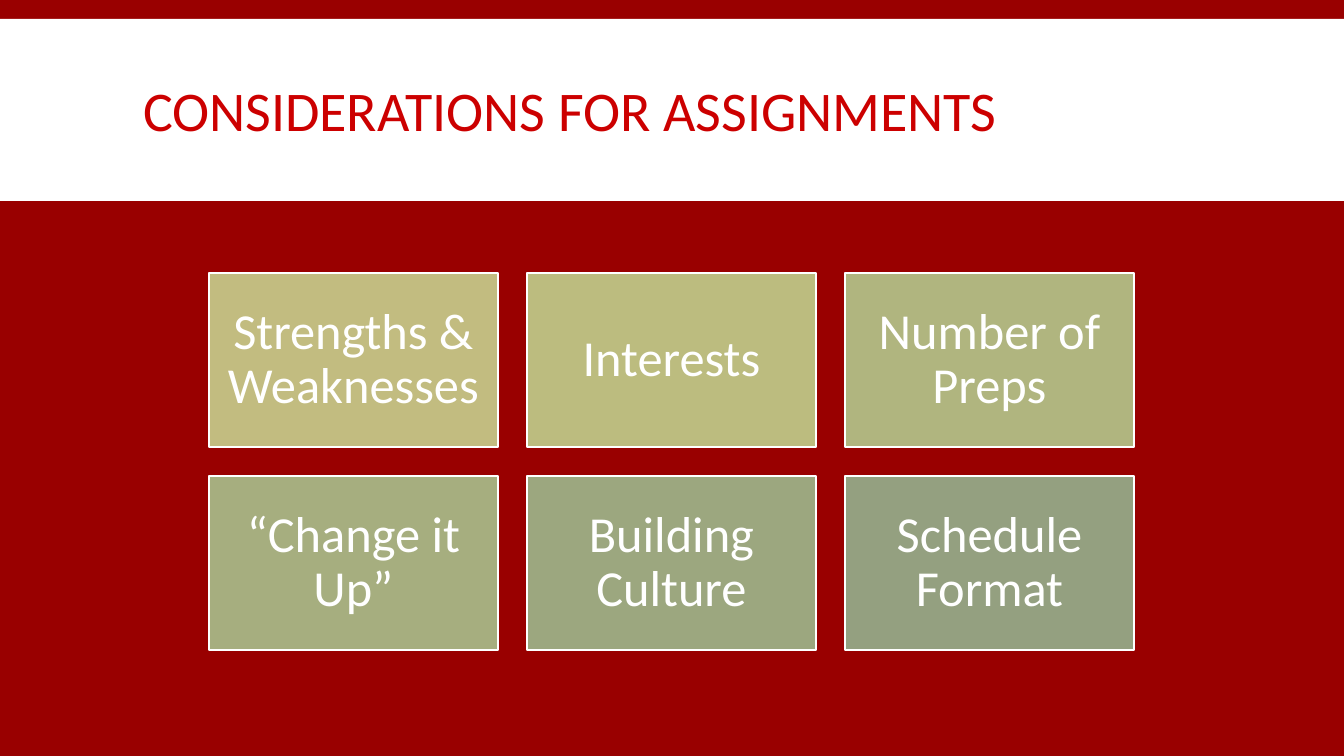
from dataclasses import dataclass

from pptx import Presentation
from pptx.dml.color import RGBColor
from pptx.enum.shapes import MSO_SHAPE
from pptx.enum.text import MSO_ANCHOR, MSO_AUTO_SIZE, PP_ALIGN
from pptx.util import Emu, Pt

RECTANGLE = MSO_SHAPE.RECTANGLE
MIDDLE = MSO_ANCHOR.MIDDLE
NO_AUTOFIT = MSO_AUTO_SIZE.NONE
LEFT, CENTER = PP_ALIGN.LEFT, PP_ALIGN.CENTER
TITLE_ONLY = 5
EMU_PER_PX = 914400 / 100.8


def px(length):
    return Emu(round(length * EMU_PER_PX))


@dataclass(frozen=True)
class Theme:
    font: str = "Calibri"
    background: str = "990000"
    white: str = "FFFFFF"
    heading: str = "CC0000"
    tiles: tuple = ("C2BC80", "BCBC7F", "B0B57F", "A6AE7F", "9CA77F", "94A080")
    heading_size: int = 40
    tile_size: int = 36
    outline: int = 1


class SlideBuilder:
    def __init__(self, slide, theme):
        self.slide = slide
        self.theme = theme
        backdrop = slide.background.fill
        backdrop.solid()
        backdrop.fore_color.rgb = RGBColor.from_string(theme.background)

    def add_text(self, frame, text, size, color, align, spacing):
        frame.word_wrap = True
        frame.auto_size = NO_AUTOFIT
        frame.vertical_anchor = MIDDLE
        paragraph = frame.paragraphs[0]
        paragraph.alignment = align
        paragraph.line_spacing = spacing
        run = paragraph.add_run()
        run.text = text
        run.font.name = self.theme.font
        run.font.size = Pt(size)
        run.font.color.rgb = RGBColor.from_string(color)

    def rectangle(self, left, top, width, height, color):
        panel = self.slide.shapes.add_shape(
            RECTANGLE, px(left), px(top), px(width), px(height)
        )
        panel.shadow.inherit = False
        panel.fill.solid()
        panel.fill.fore_color.rgb = RGBColor.from_string(color)
        panel.line.fill.background()
        return panel

    def title(self, text, left, top, width, height):
        heading = self.slide.shapes.title
        heading.left, heading.top = px(left), px(top)
        heading.width, heading.height = px(width), px(height)
        heading.element.getparent().append(heading.element)
        self.add_text(heading.text_frame, text, self.theme.heading_size,
                      self.theme.heading, LEFT, 0.85)

    def tile(self, text, left, top, width, height, color):
        panel = self.rectangle(left, top, width, height, color)
        panel.line.color.rgb = RGBColor.from_string(self.theme.white)
        panel.line.width = Pt(self.theme.outline)
        frame = panel.text_frame
        frame.margin_left = frame.margin_right = px(15)
        frame.margin_top = frame.margin_bottom = px(15)
        self.add_text(frame, text, self.theme.tile_size,
                      self.theme.white, CENTER, 0.9)


def main():
    theme = Theme()
    deck = Presentation()
    deck.slide_width, deck.slide_height = px(1344), px(756)
    slide = deck.slides.add_slide(deck.slide_layouts[TITLE_ONLY])
    builder = SlideBuilder(slide, theme)

    builder.rectangle(0, 19, 1344, 182, theme.white)
    builder.title("CONSIDERATIONS FOR ASSIGNMENTS", 133, 31, 1079, 166)

    considerations = (
        "Strengths & Weaknesses", "Interests", "Number of Preps",
        "“Change it Up”", "Building Culture", "Schedule Format",
    )
    columns, width, height, gap = 3, 289, 174, 29
    for index, (consideration, color) in enumerate(zip(considerations, theme.tiles)):
        row, column = divmod(index, columns)
        builder.tile(consideration, 209 + column * (width + gap),
                     273 + row * (height + gap), width, height, color)

    deck.save("out.pptx")


if __name__ == "__main__":
    main()
